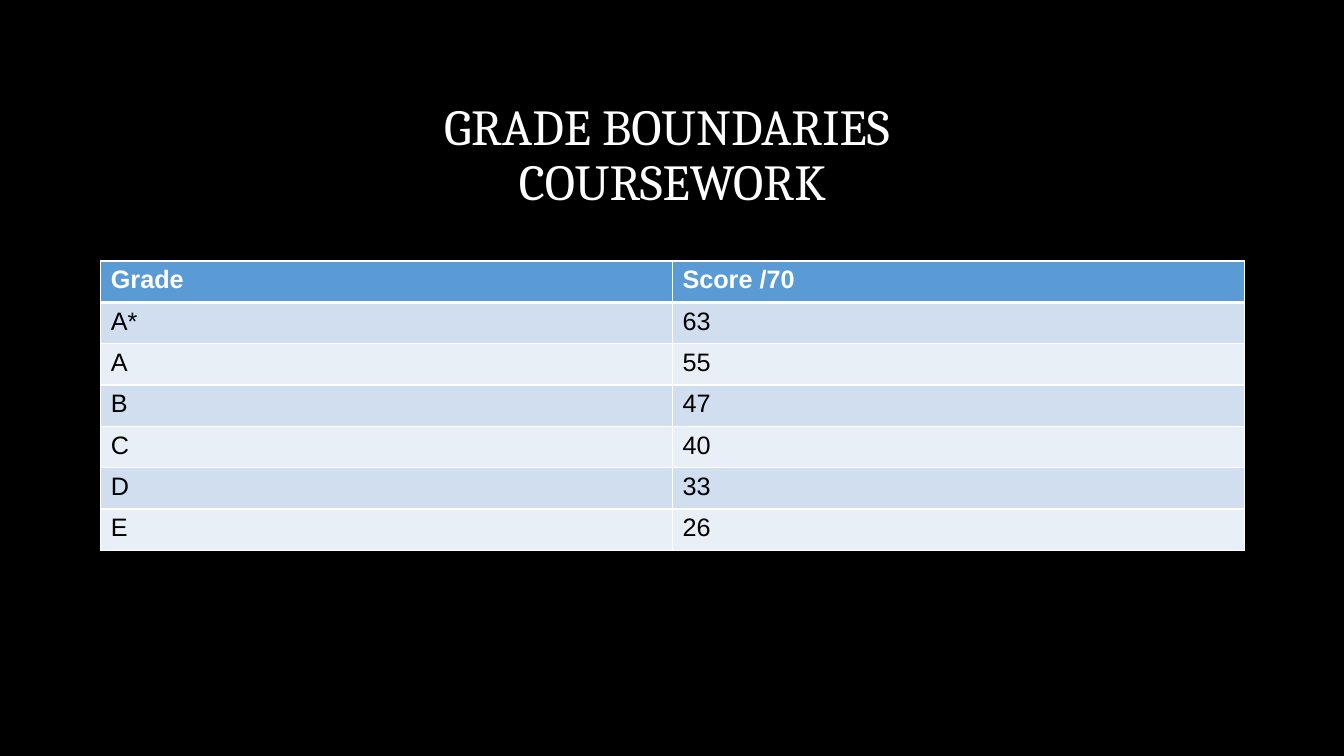
from lxml import etree
from pptx import Presentation
from pptx.dml.color import RGBColor
from pptx.enum import text
from pptx.oxml import ns
from pptx.util import Inches, Pt

# Content
TITLE_LINES = ["GRADE BOUNDARIES ", "COURSEWORK"]
GRADES = [
    ("Grade", "Score /70"),
    ("A*", "63"),
    ("A", "55"),
    ("B", "47"),
    ("C", "40"),
    ("D", "33"),
    ("E", "26"),
]

BLACK = RGBColor(0x00, 0x00, 0x00)
WHITE = RGBColor(0xFF, 0xFF, 0xFF)
HEADER_BLUE = RGBColor(0x5B, 0x9B, 0xD5)
BANDS = [RGBColor(0xE9, 0xEF, 0xF7), RGBColor(0xD0, 0xDE, 0xEF)]

LEFT, WIDTH = 1, 11.34
ROW_HEIGHT = 0.41


def style_font(font, name, size, color, bold=False):
    font.name, font.size, font.bold = name, Pt(size), bold
    font.color.rgb = color


def set_borders(cell, widths):
    """Draw white borders; widths maps each side (L, R, T, B) to points."""
    properties = cell._tc.get_or_add_tcPr()
    for position, (side, width) in enumerate(widths.items()):
        line = etree.Element(ns.qn(f"a:ln{side}"), w=str(Pt(width)))
        fill = etree.SubElement(line, ns.qn("a:solidFill"))
        etree.SubElement(fill, ns.qn("a:srgbClr"), val=str(WHITE))
        properties.insert(position, line)


# Slide
deck = Presentation()
deck.slide_width, deck.slide_height = Inches(13.33), Inches(7.5)
page = deck.slides.add_slide(deck.slide_layouts[5])
page.background.fill.solid()
page.background.fill.fore_color.rgb = BLACK

# Title
title = page.shapes.title
title.left, title.top = Inches(LEFT), Inches(0.68)
title.width, title.height = Inches(WIDTH), Inches(1.75)
frame = title.text_frame
frame.auto_size = text.MSO_AUTO_SIZE.NONE
frame.vertical_anchor = text.MSO_ANCHOR.MIDDLE
para = frame.paragraphs[0]
para.alignment = text.PP_ALIGN.CENTER
para.line_spacing = 0.9
for number, line in enumerate(TITLE_LINES):
    if number:
        para.add_line_break()
    span = para.add_run()
    span.text = line
    style_font(span.font, "Cambria", 36, WHITE)

# Grade table
table = page.shapes.add_table(
    len(GRADES), len(GRADES[0]), Inches(LEFT), Inches(2.59),
    Inches(WIDTH), Inches(ROW_HEIGHT * len(GRADES))).table
for row_number, values in enumerate(GRADES):
    header = row_number == 0
    # The rule between header and body is thicker than the others
    widths = {"L": 1, "R": 1, "T": 3 if row_number == 1 else 1, "B": 3 if header else 1}
    for column_number, value in enumerate(values):
        cell = table.cell(row_number, column_number)
        cell.fill.solid()
        cell.fill.fore_color.rgb = HEADER_BLUE if header else BANDS[row_number % 2]
        set_borders(cell, widths)
        span = cell.text_frame.paragraphs[0].add_run()
        span.text = value
        style_font(span.font, "Arial", 18, WHITE if header else BLACK, header)

deck.save("out.pptx")
